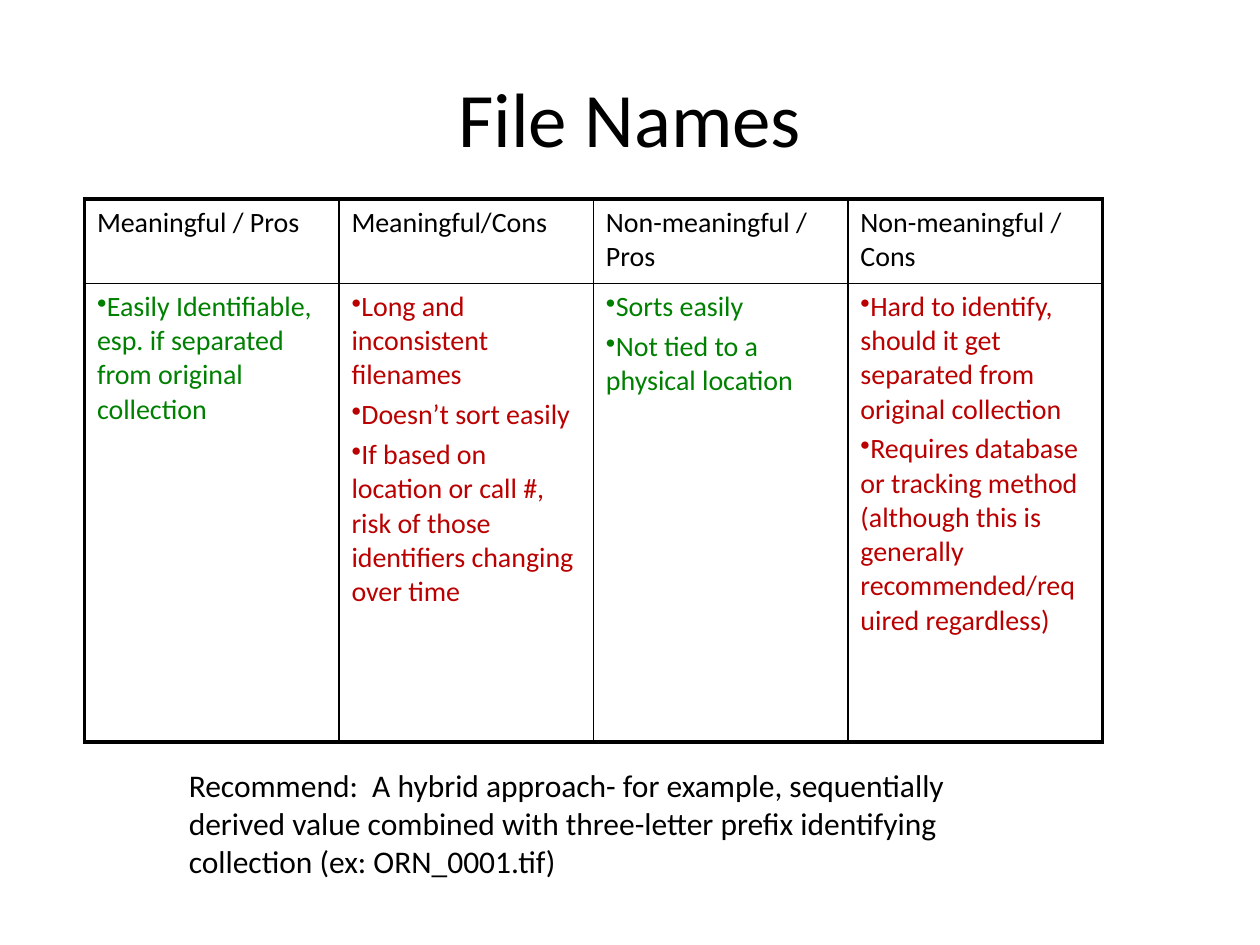
from dataclasses import dataclass

import pptx
import pptx.dml.color
import pptx.enum.text
import pptx.oxml.ns
import pptx.util
from lxml import etree

Inches = pptx.util.Inches
Pt = pptx.util.Pt
BLACK, GREEN, RED = "000000", "008000", "BA0000"
OUTER, INNER = 2.25, 1


@dataclass
class Column:
    heading: str
    points: list[str]
    color: str


COLUMNS = [
    Column("Meaningful / Pros",
           ["Easily Identifiable, esp. if separated from original collection"], GREEN),
    Column("Meaningful/Cons",
           ["Long and inconsistent filenames", "Doesn’t sort easily",
            "If based on location or call #, risk of those identifiers changing over time"], RED),
    Column("Non-meaningful / Pros",
           ["Sorts easily", "Not tied to a physical location"], GREEN),
    Column("Non-meaningful / Cons",
           ["Hard to identify, should it get separated from original collection",
            "Requires database or tracking method (although this is generally "
            "recommended/required regardless)"], RED),
]
RECOMMENDATION = [
    "Recommend:  A hybrid approach- for example, sequentially",
    "derived value combined with three-letter prefix identifying",
    "collection (ex: ORN_0001.tif)",
]


def rgb(value: str) -> pptx.dml.color.RGBColor:
    return pptx.dml.color.RGBColor.from_string(value)


def add_child(parent, tag: str, **attributes: str):
    child = etree.SubElement(parent, pptx.oxml.ns.qn(tag))
    for name, value in attributes.items():
        child.set(name, value)
    return child


def write(frame, lines: list[str], *, size: float, color: str = BLACK,
          before: float = 0, bullet: str = "", align=None) -> None:
    """Fill a text frame with one paragraph per line."""
    for index, line in enumerate(lines):
        para = frame.add_paragraph() if index else frame.paragraphs[0]
        para.alignment = align
        para.space_before = Pt(before)
        if bullet:
            add_child(para._p.get_or_add_pPr(), "a:buChar", char=bullet)
        span = para.add_run()
        span.text = line
        span.font.name = "Calibri"
        span.font.size = Pt(size)
        span.font.color.rgb = rgb(color)


def set_borders(cell, **widths: float) -> None:
    """Draw black edges; keywords L, R, T and B give widths in points."""
    properties = cell._tc.get_or_add_tcPr()
    for side, width in widths.items():
        line = add_child(properties, f"a:ln{side}", w=str(Pt(width)))
        add_child(add_child(line, "a:solidFill"), "a:srgbClr", val=BLACK)


def add_comparison(page, columns: list[Column]) -> None:
    table = page.shapes.add_table(2, len(columns), Inches(0.67), Inches(1.58),
                                  Inches(8.08), Inches(4.31)).table
    table.first_row = table.horz_banding = False
    table.rows[0].height, table.rows[1].height = Inches(0.67), Inches(3.64)
    last = len(columns) - 1
    for index, column in enumerate(columns):
        table.columns[index].width = Inches(2.02)
        heading, body = table.cell(0, index), table.cell(1, index)
        left = OUTER if index == 0 else INNER
        right = OUTER if index == last else INNER
        set_borders(heading, L=left, R=right, T=OUTER, B=INNER)
        set_borders(body, L=left, R=right, T=INNER, B=OUTER)
        for cell in (heading, body):
            cell.fill.background()
        write(heading.text_frame, [column.heading], size=16, before=3.2)
        write(body.text_frame, column.points, size=16, before=3.2,
              color=column.color, bullet="•")


def main() -> None:
    deck = pptx.Presentation()
    deck.slide_width, deck.slide_height = Inches(10), Inches(7.5)
    page = deck.slides.add_slide(deck.slide_layouts.get_by_name("Title Only"))

    title = page.shapes.title
    title.left, title.top = Inches(0.5), Inches(0.3)
    title.width, title.height = Inches(9), Inches(1.25)
    title.text_frame.vertical_anchor = pptx.enum.text.MSO_ANCHOR.MIDDLE
    write(title.text_frame, ["File Names"], size=44,
          align=pptx.enum.text.PP_ALIGN.CENTER)

    add_comparison(page, COLUMNS)

    box = page.shapes.add_textbox(Inches(1.4), Inches(6.03), Inches(7.81), Inches(1.01))
    box.text_frame.word_wrap = False
    box.text_frame.auto_size = pptx.enum.text.MSO_AUTO_SIZE.SHAPE_TO_FIT_TEXT
    write(box.text_frame, RECOMMENDATION, size=18)

    deck.save("out.pptx")


if __name__ == "__main__":
    main()
